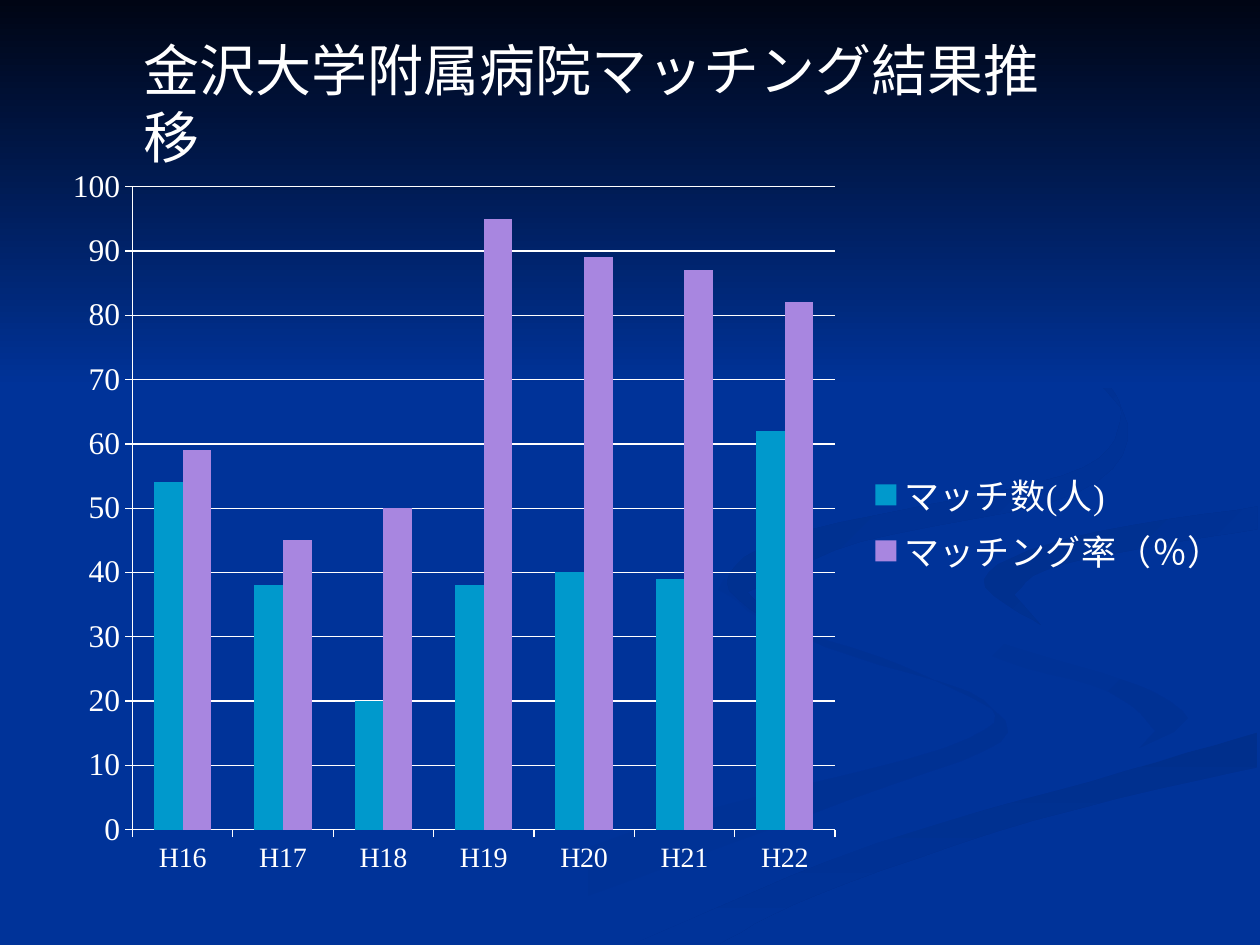
from dataclasses import dataclass

from lxml import etree
from pptx import Presentation
from pptx.chart.data import CategoryChartData
from pptx.dml.color import RGBColor
from pptx.enum.chart import XL_CHART_TYPE, XL_LEGEND_POSITION, XL_TICK_MARK
from pptx.enum.shapes import MSO_SHAPE
from pptx.enum.text import MSO_ANCHOR, MSO_AUTO_SIZE, PP_ALIGN
from pptx.oxml.ns import qn
from pptx.util import Inches, Pt

COLUMNS = XL_CHART_TYPE.COLUMN_CLUSTERED
LEGEND_RIGHT = XL_LEGEND_POSITION.RIGHT
TICK_OUTSIDE = XL_TICK_MARK.OUTSIDE
TICK_NONE = XL_TICK_MARK.NONE
RECTANGLE = MSO_SHAPE.RECTANGLE
TOP = MSO_ANCHOR.TOP
NO_AUTOFIT = MSO_AUTO_SIZE.NONE
LEFT = PP_ALIGN.LEFT


@dataclass(frozen=True)
class Theme:
    """Colours, font and type sizes of the slide."""
    font: str = "Times New Roman"
    white: str = "FFFFFF"
    blue: str = "003399"
    shade: str = "003193"
    deep: str = "002F8C"
    night: str = "000514"
    count: str = "0099CC"
    rate: str = "A886E0"
    title: int = 32
    legend: int = 20
    values: int = 18
    categories: int = 16
    base: int = 10


THEME = Theme()

TITLE = "金沢大学附属病院マッチング結果推移"
YEARS = [f"H{year}" for year in range(16, 23)]
SERIES = [
    ("マッチ数(人)", (54, 38, 20, 38, 40, 39, 62), THEME.count),
    ("マッチング率（％）", (59, 45, 50, 95, 89, 87, 82), THEME.rate),
]

PLOT_LAYOUT = {"x": 0.07, "y": 0.04, "w": 0.59, "h": 0.88}
LEGEND_LAYOUT = {"x": 0.68, "y": 0.42, "w": 0.32, "h": 0.16}

CURVE_STEPS = 6
UNITS_PER_INCH = 100
RIBBONS = [
    (THEME.blue, THEME.shade, 0,
     ((575, 459), (602, 490), (715, 528), (800, 581), (676, 634), (361, 749)),
     ((300, 749), (499, 661), (749, 594), (781, 556), (654, 513), (570, 468))),
    (THEME.blue, THEME.shade, 45,
     ((724, 464), (758, 498), (870, 530), (943, 570), (894, 605)),
     ((917, 580), (880, 549), (781, 518), (724, 466))),
    (THEME.deep, THEME.blue, 90,
     ((503, 749), (696, 669), (867, 620), (998, 581)),
     ((998, 609), (821, 651), (649, 710), (571, 749))),
    (THEME.blue, THEME.blue, 0,
     ((999, 387), (808, 417), (725, 464), (775, 503), (943, 570), (743, 643), (477, 749)),
     ((503, 749), (696, 669), (999, 581)),
     ((999, 538), (848, 503), (782, 460), (865, 424), (999, 402))),
    (THEME.deep, THEME.blue, 45,
     ((998, 402), (849, 427), (781, 460), (826, 496)),
     ((805, 472), (843, 448), (998, 420))),
    (THEME.deep, THEME.blue, 45,
     ((762, 233), (864, 291), (889, 335), (842, 378), (637, 422), (577, 462), (622, 500)),
     ((593, 470), (683, 430), (855, 391), (890, 324), (762, 233))),
]


def rgb(value):
    """Turn a hex string into a colour."""
    return RGBColor.from_string(value)


def apply(target, **values):
    """Set several attributes on an object."""
    for name, value in values.items():
        setattr(target, name, value)


def format_font(font, size):
    """Give a font the slide's typeface and white colour."""
    apply(font, name=THEME.font, size=Pt(size), bold=False)
    font.color.rgb = rgb(THEME.white)


def paint(shape, start, end, angle):
    """Fill a borderless shape with a gradient turned clockwise by angle."""
    shape.shadow.inherit = False
    shape.line.fill.background()
    shape.fill.gradient()
    shape.fill.gradient_angle = (360 - angle) % 360
    for stop, colour, position in zip(shape.fill.gradient_stops, (start, end), (0, 1)):
        stop.color.rgb = rgb(colour)
        stop.position = position


def spline(before, start, end, after, ratio):
    """Return one coordinate of a smooth curve between start and end."""
    slope_in, slope_out = (end - before) / 2, (after - start) / 2
    bend = 3 * (end - start) - 2 * slope_in - slope_out
    twist = 2 * (start - end) + slope_in + slope_out
    return start + ratio * (slope_in + ratio * (bend + ratio * twist))


def smooth_edge(knots):
    """Return points along a smooth curve through all knots."""
    padded = (knots[0], *knots, knots[-1])
    points = [
        tuple(spline(*axis, step / CURVE_STEPS) for axis in zip(*window))
        for window in zip(padded, padded[1:], padded[2:], padded[3:])
        for step in range(CURVE_STEPS)
    ]
    return points + [knots[-1]]


def add_ribbon(slide, start, end, angle, *edges):
    """Draw one curved ribbon of the backdrop."""
    points = [point for edge in edges for point in smooth_edge(edge)]
    builder = slide.shapes.build_freeform(*points[0], scale=Inches(1) / UNITS_PER_INCH)
    builder.add_line_segments(points[1:], close=True)
    paint(builder.convert_to_shape(), start, end, angle)


def add_backdrop(slide):
    """Draw the blue background, its ribbons and the dark sky."""
    slide.background.fill.solid()
    slide.background.fill.fore_color.rgb = rgb(THEME.blue)
    for ribbon in RIBBONS:
        add_ribbon(slide, *ribbon)
    sky = slide.shapes.add_shape(RECTANGLE, 0, 0, Inches(10), Inches(3.08))
    paint(sky, THEME.night, THEME.blue, 90)


def place(parent, layout, before, inner=False):
    """Fix a chart part at fractions of the chart area."""
    for old in parent.findall(qn("c:layout")):
        parent.remove(old)
    holder = etree.Element(qn("c:layout"))
    manual = etree.SubElement(holder, qn("c:manualLayout"))
    settings = {"layoutTarget": "inner"} if inner else {}
    settings.update(xMode="edge", yMode="edge", **layout)
    for name, value in settings.items():
        etree.SubElement(manual, qn(f"c:{name}")).set("val", str(value))
    parent.find(qn(before)).addprevious(holder)


def format_line(line):
    """Make a chart line thin and white."""
    line.color.rgb = rgb(THEME.white)
    line.width = Pt(0.75)


def format_axis(axis, size):
    """Draw an axis with white line, outer ticks and labels."""
    apply(axis, major_tick_mark=TICK_OUTSIDE, minor_tick_mark=TICK_NONE)
    format_font(axis.tick_labels.font, size)
    format_line(axis.format.line)


def add_match_chart(slide):
    """Add the column chart of matches and matching rate by year."""
    data = CategoryChartData()
    data.categories = YEARS
    for name, values, _ in SERIES:
        data.add_series(name, values)
    area = [Inches(length) for length in (0.39, 1.25, 9.45, 5.8)]
    chart = slide.shapes.add_chart(COLUMNS, *area, data).chart
    apply(chart, has_title=False, has_legend=True)
    format_font(chart.font, THEME.base)
    plot = chart.plots[0]
    apply(plot, gap_width=150, overlap=0, vary_by_categories=False)
    for series, (_, _, colour) in zip(plot.series, SERIES):
        series.format.fill.solid()
        series.format.fill.fore_color.rgb = rgb(colour)
    format_axis(chart.category_axis, THEME.categories)
    format_axis(chart.value_axis, THEME.values)
    apply(chart.value_axis, minimum_scale=0, maximum_scale=100, major_unit=10)
    format_line(chart.value_axis.major_gridlines.format.line)
    apply(chart.legend, position=LEGEND_RIGHT, include_in_layout=False)
    format_font(chart.legend.font, THEME.legend)
    place(plot._element.getparent(), PLOT_LAYOUT, "c:barChart", inner=True)
    place(chart.legend._element, LEGEND_LAYOUT, "c:overlay")


def set_title(slide):
    """Write the title and bring it in front of the backdrop."""
    title = slide.shapes.title
    apply(title, left=Inches(1.04), top=Inches(0.23), width=Inches(7.47), height=Inches(1.7))
    frame = title.text_frame
    apply(frame, text=TITLE, word_wrap=True, auto_size=NO_AUTOFIT, vertical_anchor=TOP)
    para = frame.paragraphs[0]
    para.alignment = LEFT
    format_font(para.runs[0].font, THEME.title)
    slide.shapes.element.append(title.element)


def main():
    """Build the slide and save the deck."""
    deck = Presentation()
    apply(deck, slide_width=Inches(10), slide_height=Inches(7.5))
    slide = deck.slides.add_slide(deck.slide_layouts[5])
    add_backdrop(slide)
    add_match_chart(slide)
    set_title(slide)
    deck.save("out.pptx")


if __name__ == "__main__":
    main()
